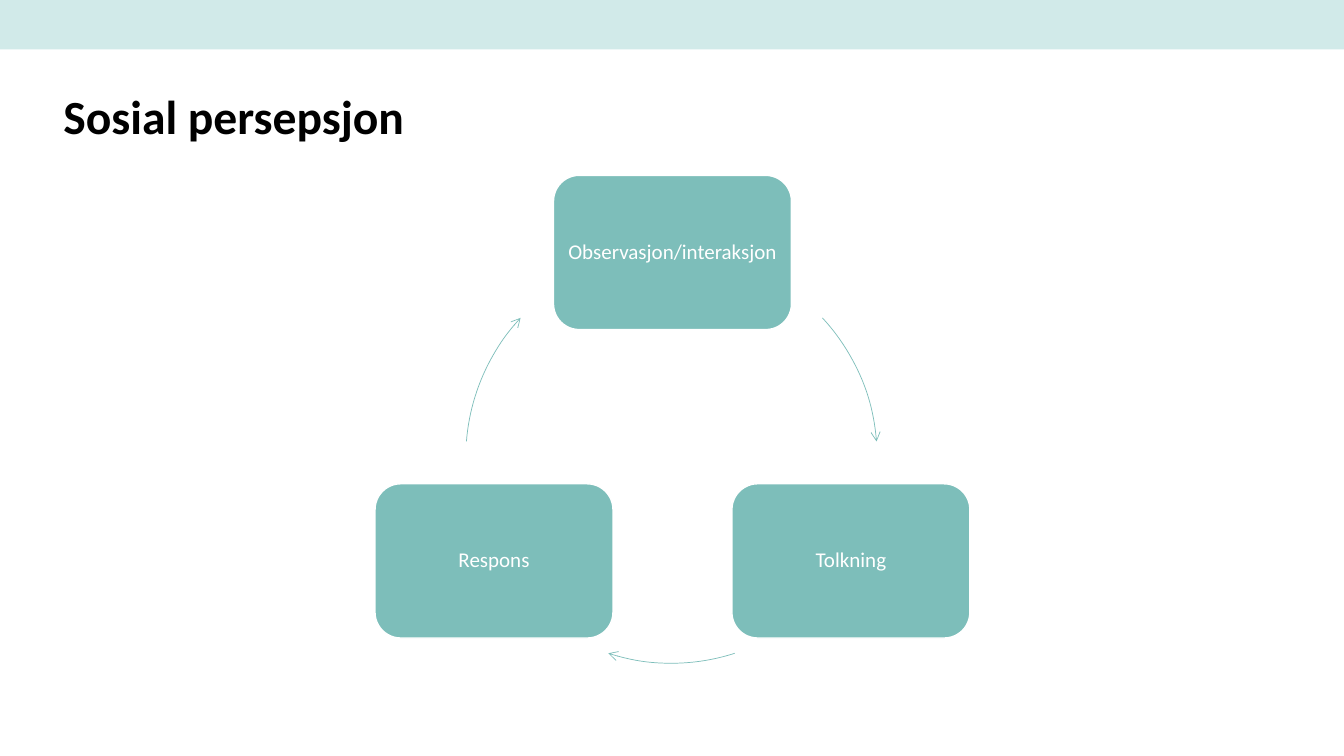
from dataclasses import dataclass

from pptx import Presentation
from pptx.dml.color import RGBColor
from pptx.enum.shapes import MSO_SHAPE
from pptx.enum.text import MSO_ANCHOR, PP_ALIGN
from pptx.oxml.ns import qn
from pptx.shapes.autoshape import Shape
from pptx.slide import Slide
from pptx.text.text import TextFrame
from pptx.util import Emu, Pt
from lxml import etree

RECTANGLE = MSO_SHAPE.RECTANGLE
ROUNDED = MSO_SHAPE.ROUNDED_RECTANGLE
ARC = MSO_SHAPE.ARC
MIDDLE, TOP = MSO_ANCHOR.MIDDLE, MSO_ANCHOR.TOP
CENTER, LEFT = PP_ALIGN.CENTER, PP_ALIGN.LEFT

EMU_PER_PX = 9144
SLIDE_WIDTH, SLIDE_HEIGHT = 1333, 750
FONT = "Calibri"
PALE_TEAL, TEAL, WHITE, BLACK = "D1EAE9", "7DBEBA", "FFFFFF", "000000"
BOX_WIDTH, BOX_HEIGHT = 236, 153
CYCLE_X, CYCLE_Y, CYCLE_RADIUS = 666, 454, 204


@dataclass(frozen=True)
class Step:
    """A box of the cycle and the clockwise arrow that leaves it."""

    label: str
    left: int
    top: int
    arrow_start: float
    arrow_end: float


STEPS = [
    Step("Observasjon/interaksjon", 549, 174, 317.2, 355.5),
    Step("Tolkning", 726, 480, 72.1, 107.9),
    Step("Respons", 372, 480, 184.5, 222.8),
]


def px(length: int) -> Emu:
    """Convert px to EMU."""
    return Emu(length * EMU_PER_PX)


def color(value: str) -> RGBColor:
    """Convert a hex string to a colour."""
    return RGBColor.from_string(value)


def add_shape(slide: Slide, kind: MSO_SHAPE, left: int, top: int,
              width: int, height: int) -> Shape:
    """Add a preset shape without a shadow."""
    shape = slide.shapes.add_shape(kind, px(left), px(top), px(width), px(height))
    shape.shadow.inherit = False
    return shape


def write(frame: TextFrame, text: str, size: int, text_color: str, inset: int,
          anchor: MSO_ANCHOR, alignment: PP_ALIGN, bold: bool = False) -> None:
    """Write one paragraph into a text frame."""
    frame.word_wrap = True
    frame.vertical_anchor = anchor
    frame.margin_left = frame.margin_right = px(inset)
    frame.margin_top = frame.margin_bottom = px(inset)
    paragraph = frame.paragraphs[0]
    paragraph.alignment = alignment
    run = paragraph.add_run()
    run.text = text
    run.font.name = FONT
    run.font.size = Pt(size)
    run.font.bold = bold
    run.font.color.rgb = color(text_color)


def add_header(slide: Slide) -> None:
    """Add the top band and the title."""
    band = add_shape(slide, RECTANGLE, 0, 0, SLIDE_WIDTH, 49)
    band.fill.solid()
    band.fill.fore_color.rgb = color(PALE_TEAL)
    band.line.fill.background()
    title = slide.shapes.add_textbox(px(63), px(86), px(1207), px(57))
    write(title.text_frame, "Sosial persepsjon", 34, BLACK, 0, TOP, LEFT, True)


def add_box(slide: Slide, step: Step) -> None:
    """Add the labelled box of a step."""
    box = add_shape(slide, ROUNDED, step.left, step.top, BOX_WIDTH, BOX_HEIGHT)
    box.fill.solid()
    box.fill.fore_color.rgb = color(TEAL)
    box.line.color.rgb = color(WHITE)
    box.line.width = Pt(1)
    write(box.text_frame, step.label, 15, WHITE, 6, MIDDLE, CENTER)
    box.text_frame.paragraphs[0].line_spacing = 0.9


def add_arrow(slide: Slide, step: Step) -> None:
    """Add the curved arrow to the next step."""
    arrow = add_shape(slide, ARC, CYCLE_X - CYCLE_RADIUS, CYCLE_Y - CYCLE_RADIUS,
                      2 * CYCLE_RADIUS, 2 * CYCLE_RADIUS)
    arrow.adjustments[0] = step.arrow_start * 0.6
    arrow.adjustments[1] = step.arrow_end * 0.6
    arrow.fill.background()
    arrow.line.color.rgb = color(TEAL)
    arrow.line.width = Pt(0.5)
    outline = arrow.line._get_or_add_ln()
    etree.SubElement(outline, qn("a:tailEnd"), type="arrow")


def main() -> None:
    """Build and save the slide."""
    presentation = Presentation()
    presentation.slide_width = px(SLIDE_WIDTH)
    presentation.slide_height = px(SLIDE_HEIGHT)
    slide = presentation.slides.add_slide(presentation.slide_layouts[6])
    add_header(slide)
    for step in STEPS:
        add_box(slide, step)
        add_arrow(slide, step)
    presentation.save("out.pptx")


if __name__ == "__main__":
    main()
